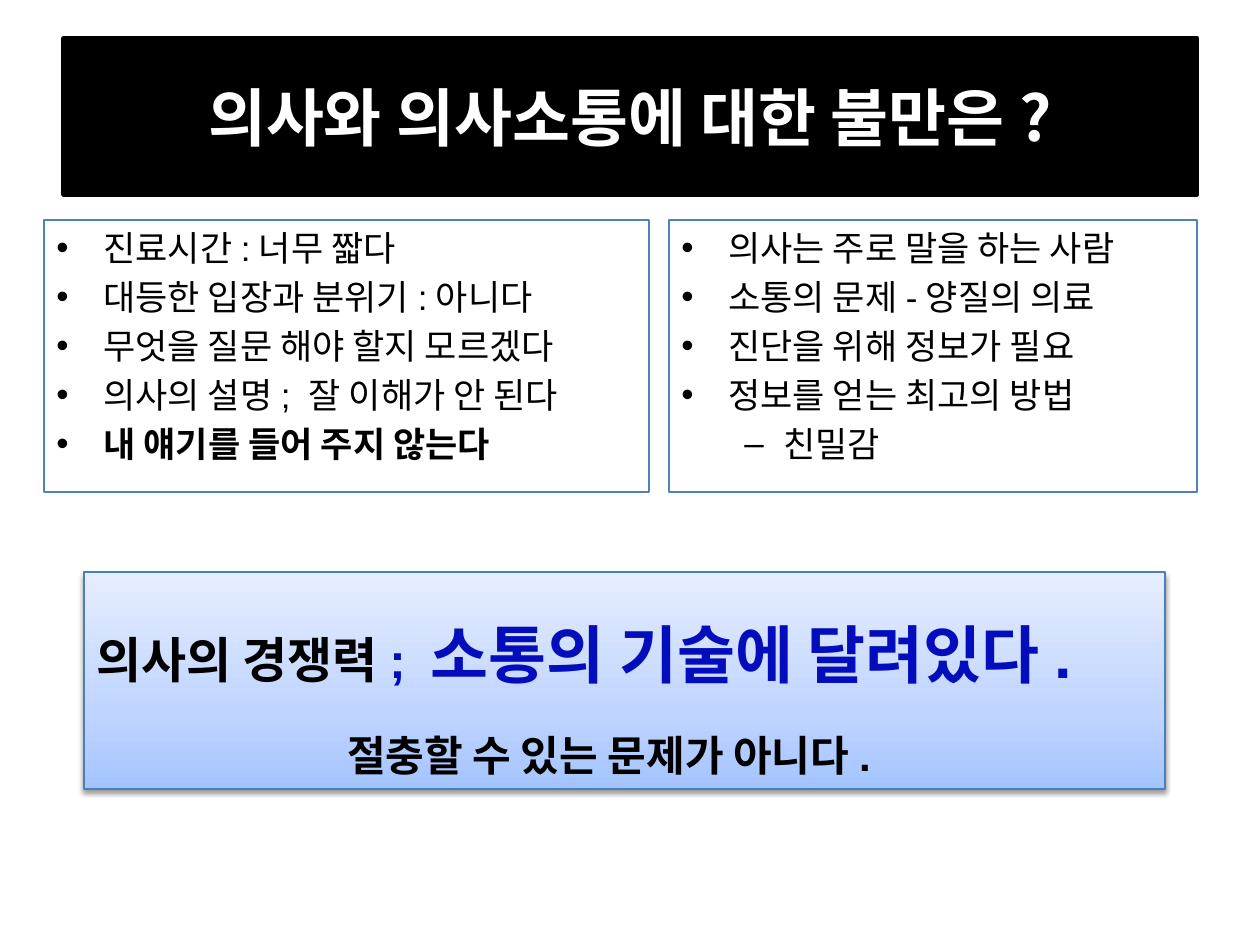
from dataclasses import dataclass

from lxml import etree
from pptx import Presentation
from pptx.dml.color import RGBColor
from pptx.enum.shapes import MSO_SHAPE
from pptx.enum.text import MSO_ANCHOR, PP_ALIGN
from pptx.oxml.ns import qn
from pptx.util import Pt

RECT = MSO_SHAPE.RECTANGLE
TOP, MIDDLE = MSO_ANCHOR.TOP, MSO_ANCHOR.MIDDLE
LEFT, CENTER = PP_ALIGN.LEFT, PP_ALIGN.CENTER
SCALE = 914400 / 126


@dataclass(frozen=True)
class Theme:
    """Hold the colours, fonts and type sizes."""
    black: str = "000000"
    white: str = "FFFFFF"
    edge: str = "4F81BD"
    rim: str = "4B7EBC"
    blue: str = "040DBC"
    fade: tuple = ((0, "A4C4FF"), (35, "BFD4FF"), (100, "E6EEFF"))
    font: str = "Arial"
    head: str = "Noto Sans CJK KR"
    large: int = 36
    mid: int = 28
    small: int = 24
    body: int = 20


THEME = Theme()
BULLET, DASH = ("•", 0, 47, -47), ("–", 1, 102, -39)
ISSUES = (
    ("진료시간:너무 짧다", BULLET, False),
    ("대등한 입장과 분위기:아니다", BULLET, False),
    ("무엇을 질문 해야 할지 모르겠다", BULLET, False),
    ("의사의 설명; 잘 이해가 안 된다", BULLET, False),
    ("내 얘기를 들어 주지 않는다", BULLET, True),
)
NEEDS = (
    ("의사는 주로 말을 하는 사람", BULLET, False),
    ("소통의 문제-양질의 의료", BULLET, False),
    ("진단을 위해 정보가 필요", BULLET, False),
    ("정보를 얻는 최고의 방법", BULLET, False),
    ("친밀감", DASH, False),
)


def px(count):
    """Turn pixels into EMU."""
    return round(count * SCALE)


def add(parent, tag, **attrs):
    """Append a drawing element with attributes."""
    texts = {key: str(value) for key, value in attrs.items()}
    return etree.SubElement(parent, qn(tag), texts)


def style(font, size=None, color=None, bold=None, name=None):
    """Set the given traits of a font."""
    if size:
        font.size = Pt(size)
    if color:
        font.color.rgb = RGBColor.from_string(color)
    if bold is not None:
        font.bold = bold
    if name:
        font.name = name


def panel(slide, area, line, width, fill=None, anchor=TOP):
    """Draw a framed text panel."""
    shape = slide.shapes.add_shape(RECT, *map(px, area))
    shape.shadow.inherit = False
    shape.line.color.rgb = RGBColor.from_string(line)
    shape.line.width = Pt(width)
    if fill:
        shape.fill.solid()
        shape.fill.fore_color.rgb = RGBColor.from_string(fill)
    else:
        shape.fill.background()
    shape.text_frame.word_wrap = True
    shape.text_frame.vertical_anchor = anchor
    return shape


def lines(frame, count):
    """Return the wanted number of paragraphs."""
    return [frame.paragraphs[0]] + [frame.add_paragraph() for _ in range(count - 1)]


def title(slide, text):
    """Draw the title bar."""
    bar = panel(slide, (63, 38, 1134, 157), THEME.black, 2, THEME.black, MIDDLE)
    para = bar.text_frame.paragraphs[0]
    para.text = text
    para.alignment = CENTER
    style(para.font, THEME.large, THEME.white, True, THEME.head)
    add(para.font._element, "a:ea", typeface=THEME.head)


def points(slide, area, items):
    """Draw a framed list of points."""
    frame = panel(slide, area, THEME.edge, 0.75).text_frame
    for para, (text, mark, bold) in zip(lines(frame, len(items)), items):
        sign, level, margin, indent = mark
        para.text = text
        props = para._p.get_or_add_pPr()
        props.set("marL", str(px(margin)))
        props.set("indent", str(px(indent)))
        add(props, "a:buFont", typeface=THEME.font)
        add(props, "a:buChar", char=sign)
        para.level = level
        para.alignment = LEFT
        para.space_before = Pt(4)
        style(para.font, THEME.body, THEME.black, bold, THEME.font)


def blend(shape, stops):
    """Fill a shape with an upward gradient."""
    shape.fill.gradient()
    shape.fill.gradient_angle = 90
    group = shape._element.spPr.find(qn("a:gradFill")).find(qn("a:gsLst"))
    for stop in list(group):
        group.remove(stop)
    for place, color in stops:
        add(add(group, "a:gs", pos=place * 1000), "a:srgbClr", val=color)


def shade(shape):
    """Cast a soft shadow below a shape."""
    effects = shape._element.spPr.find(qn("a:effectLst"))
    shadow = add(effects, "a:outerShdw", blurRad=Pt(3.1), dist=Pt(1.6),
                 dir=5400000, rotWithShape=0)
    add(add(shadow, "a:srgbClr", val=THEME.black), "a:alpha", val=38000)


def closing(slide):
    """Draw the concluding message."""
    box = panel(slide, (84, 572, 1081, 217), THEME.rim, 0.75)
    blend(box, THEME.fade)
    shade(box)
    claim, note = lines(box.text_frame, 2)
    for para in (claim, note):
        para.alignment = LEFT
        para.line_spacing = 1.5
        style(para.font, bold=True, name=THEME.font)
    for text, size, color in (
        ("의사의 경쟁력", THEME.mid, THEME.black),
        ("; ", THEME.mid, THEME.blue),
        ("소통의 기술에 달려있다.", THEME.large, THEME.blue),
    ):
        run = claim.add_run()
        run.text = text
        style(run.font, size, color)
    note.text = "절충할 수 있는 문제가 아니다."
    note._p.get_or_add_pPr().set("marL", str(px(251)))
    note.space_before = Pt(7)
    style(note.font, THEME.small, THEME.black)


def main():
    """Build and save the slide."""
    deck = Presentation()
    deck.slide_width, deck.slide_height = px(1260), px(945)
    slide = deck.slides.add_slide(deck.slide_layouts[6])
    title(slide, "의사와 의사소통에 대한 불만은?")
    points(slide, (44, 220, 605, 272), ISSUES)
    points(slide, (669, 220, 528, 272), NEEDS)
    closing(slide)
    deck.save("out.pptx")


if __name__ == "__main__":
    main()
